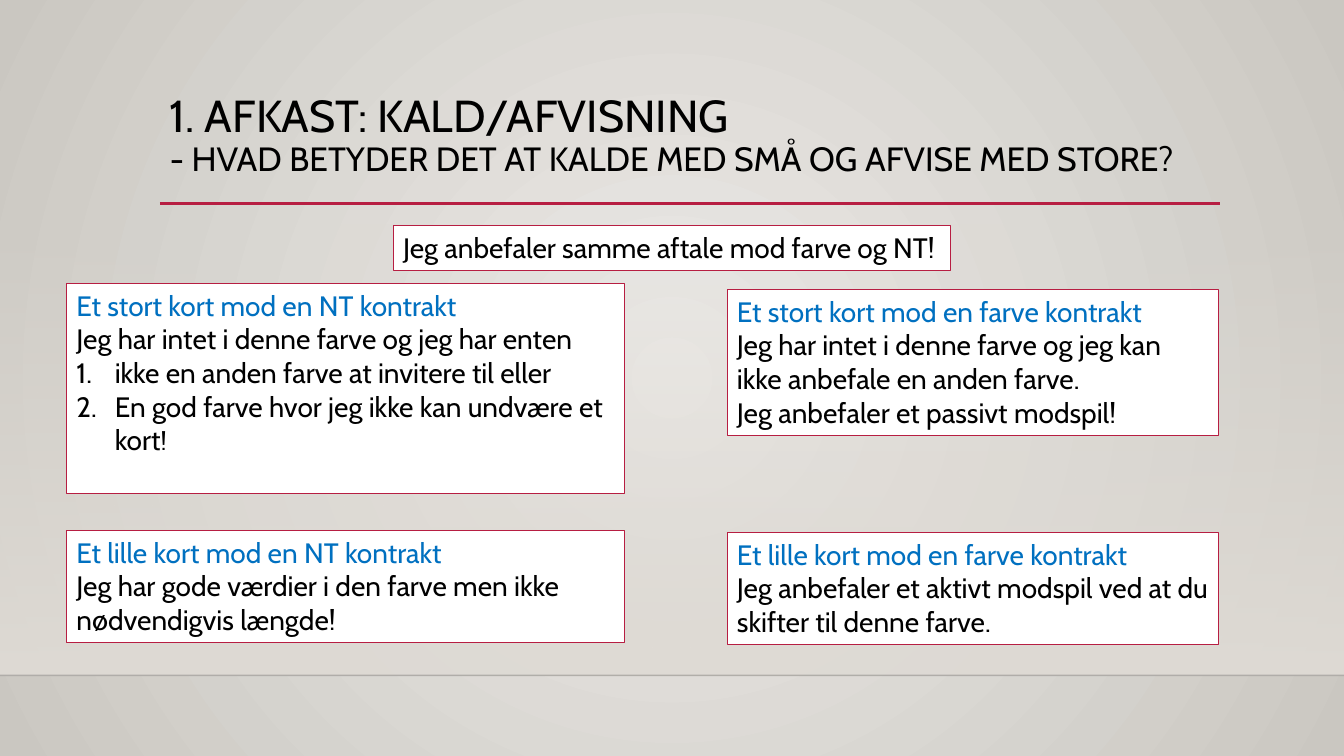
"""Build the slide on first discards: what small and large cards mean in bridge defence."""
from pptx import Presentation
from pptx.dml.color import RGBColor
from pptx.enum.shapes import MSO_CONNECTOR, MSO_SHAPE
from pptx.enum.text import MSO_ANCHOR
from pptx.oxml.ns import qn
from pptx.oxml.xmlchemy import OxmlElement
from pptx.util import Emu, Inches, Pt

RECTANGLE = MSO_SHAPE.RECTANGLE
STRAIGHT = MSO_CONNECTOR.STRAIGHT
TOP = MSO_ANCHOR.TOP

THEME = {
    "font": "Cabin",
    "title": Pt(32), "subtitle": Pt(24), "body": Pt(20), "small": Pt(18),
    "text": RGBColor.from_string("000000"),
    "heading": RGBColor.from_string("0070C0"),
    "accent": RGBColor.from_string("B71E42"),
    "paper": RGBColor.from_string("FFFFFF"),
    "floor": RGBColor.from_string("DFDBD5"),
    "floor_edge": RGBColor.from_string("000001"),
    "center": RGBColor.from_string("ECEAE7"),
    "rim": RGBColor.from_string("CAC7C1"),
}

presentation = Presentation()
presentation.slide_width = Inches(13.33)
presentation.slide_height = Inches(7.5)
slide = presentation.slides.add_slide(presentation.slide_layouts[6])


def place(left, top, width, height):
    """Turn percentages of the slide into lengths."""
    across, down = presentation.slide_width / 100, presentation.slide_height / 100
    return [Emu(round(length)) for length in
            (left * across, top * down, width * across, height * down)]


def append(parent, tag, **attributes):
    """Append an XML element with attributes to a parent."""
    element = OxmlElement(tag)
    for name, value in attributes.items():
        element.set(name, value)
    parent.append(element)
    return element


background = slide.background.fill
background.gradient()
for stop, color in zip(background.gradient_stops, ("center", "rim")):
    stop.color.rgb = THEME[color]
gradient = slide.element.find(".//" + qn("a:gradFill"))
gradient.remove(gradient.find(qn("a:lin")))
circle = append(gradient, "a:path", path="circle")
append(circle, "a:fillToRect", l="50000", t="50000", r="50000", b="50000")

floor = slide.shapes.add_shape(RECTANGLE, *place(0, 29.47, 100, 59.86))
floor.shadow.inherit = False
floor.line.fill.background()
floor.fill.gradient()
floor.fill.gradient_angle = 270
for stop in floor.fill.gradient_stops:
    stop.color.rgb = THEME["floor"]
first_stop = floor.element.find(".//" + qn("a:srgbClr"))
append(first_stop, "a:alpha", val="0")

RULES = [
    (0, 89.33, 100, "floor_edge", 1, "20000"),
    (11.9, 26.93, 78.85, "accent", 2.5, "100000"),
]
for left, top, width, color, weight, opacity in RULES:
    x, y, length, rise = place(left, top, width, 0)
    rule = slide.shapes.add_connector(STRAIGHT, x, y, x + length, y + rise)
    rule.line.color.rgb = THEME[color]
    rule.line.width = Pt(weight)
    append(rule.element.find(".//" + qn("a:srgbClr")), "a:alpha", val=opacity)
    append(rule.element.spPr, "a:effectLst")

title = slide.shapes.add_textbox(*place(11.9, 11.73, 78.75, 15.33))
title.text_frame.word_wrap = True
title.text_frame.vertical_anchor = TOP
paragraph = title.text_frame.paragraphs[0]
paragraph.text = ("1. AFKAST: KALD/AFVISNING\v"
                  "- HVAD BETYDER DET AT KALDE MED SMÅ OG AFVISE MED STORE?")
paragraph.line_spacing = 0.9
for run, size in zip(paragraph.runs, ("title", "subtitle")):
    run.font.name = THEME["font"]
    run.font.size = THEME[size]
    run.font.color.rgb = THEME["text"]

LEFT, LEFT_WIDTH = 4.95, 41.5
RIGHT, RIGHT_WIDTH = 54.1, 36.6
CARDS = [
    (29.25, 29.87, LEFT_WIDTH, 5.87, None,
     ["Jeg anbefaler samme aftale mod farve og NT!"], []),
    (LEFT, 37.47, LEFT_WIDTH, 27.87, "Et stort kort mod en NT kontrakt",
     ["Jeg har intet i denne farve og jeg har enten"],
     ["ikke en anden farve at invitere til eller",
      "En god farve hvor jeg ikke kan undvære et kort"]),
    (LEFT, 70.13, LEFT_WIDTH, 14.8, "Et lille kort mod en NT kontrakt",
     ["Jeg har gode værdier i den farve men ikke nødvendigvis længde!"], []),
    (RIGHT, 38.27, RIGHT_WIDTH, 19.33, "Et stort kort mod en farve kontrakt",
     ["Jeg har intet i denne farve og jeg kan ikke anbefale en anden farve.",
      "Jeg anbefaler et passivt modspil!"], []),
    (RIGHT, 70.4, RIGHT_WIDTH, 14.8, "Et lille kort mod en farve kontrakt",
     ["Jeg anbefaler et aktivt modspil ved at du skifter til denne farve."], []),
]
for left, top, width, height, heading, sentences, choices in CARDS:
    card = slide.shapes.add_textbox(*place(left, top, width, height))
    card.fill.solid()
    card.fill.fore_color.rgb = THEME["paper"]
    card.line.color.rgb = THEME["accent"]
    card.line.width = Pt(0.75)
    frame = card.text_frame
    frame.word_wrap = True
    frame.vertical_anchor = TOP
    headings = [heading] if heading else []
    frame.text = "\n".join(headings + sentences + choices)
    for paragraph in frame.paragraphs[len(headings + sentences):]:
        properties = paragraph.font and paragraph._p.get_or_add_pPr()
        for element in list(properties):
            properties.remove(element)
        properties.set("marL", str(Inches(0.38)))
        properties.set("indent", str(-Inches(0.38)))
        append(properties, "a:buFont", typeface="+mj-lt")
        append(properties, "a:buAutoNum", type="arabicPeriod")
    if choices:
        exclamation = frame.paragraphs[-1].add_run()
        exclamation.text = "!"
    for paragraph in frame.paragraphs:
        for run in paragraph.runs:
            run.font.name = THEME["font"]
            run.font.size = THEME["body"]
            run.font.color.rgb = THEME["text"]
    if heading:
        frame.paragraphs[0].runs[0].font.color.rgb = THEME["heading"]
    if choices:
        exclamation.font.size = THEME["small"]

presentation.save("out.pptx")
